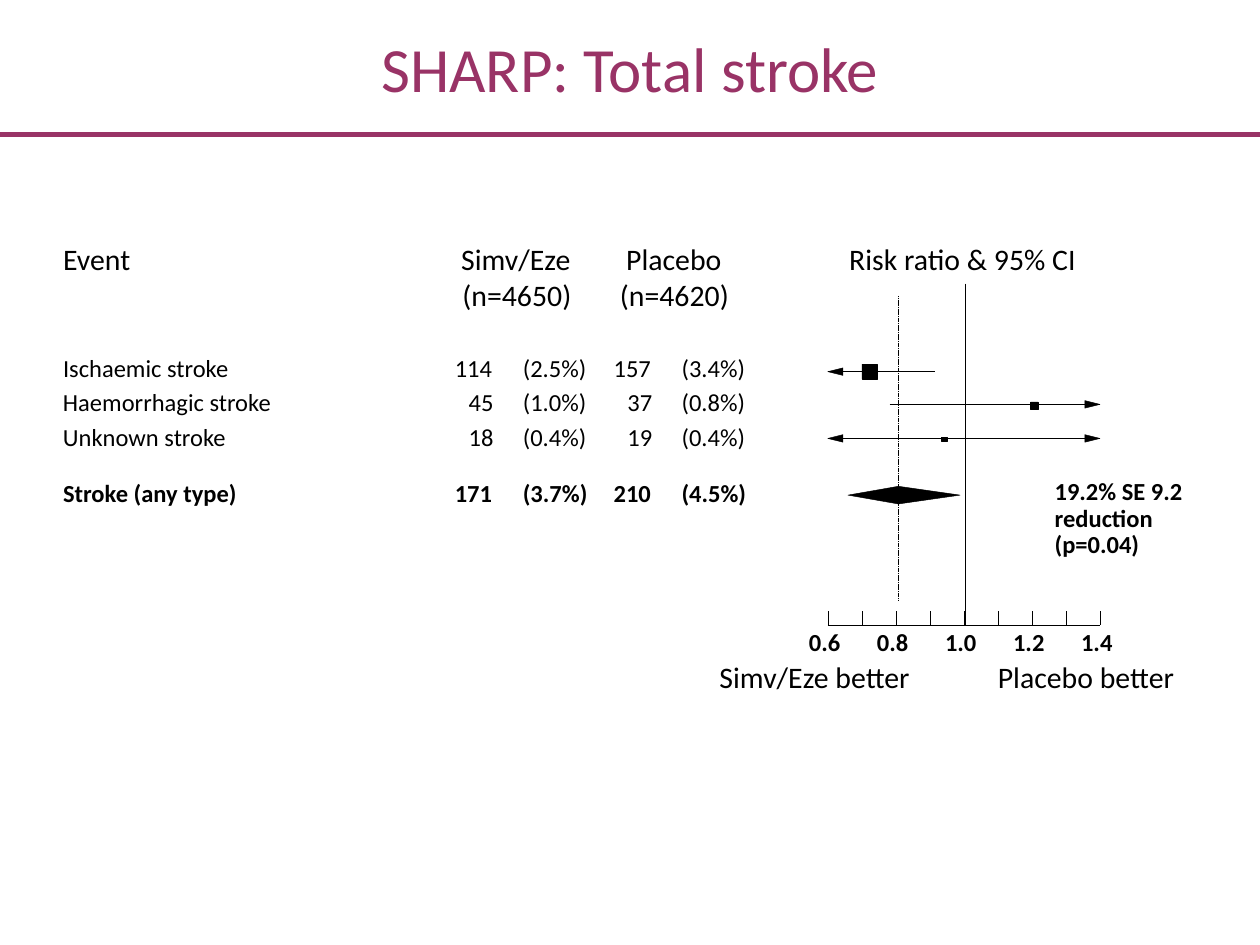
from pptx import Presentation
from pptx.dml.color import RGBColor
from pptx.enum.dml import MSO_LINE
from pptx.enum.shapes import MSO_CONNECTOR, MSO_SHAPE
from pptx.enum.text import MSO_ANCHOR, MSO_AUTO_SIZE, PP_ALIGN
from pptx.oxml.ns import qn
from pptx.util import Inches, Pt
from lxml import etree

DASH = MSO_LINE.SQUARE_DOT
STRAIGHT = MSO_CONNECTOR.STRAIGHT
RECT = MSO_SHAPE.RECTANGLE
MIDDLE = MSO_ANCHOR.MIDDLE
FIT = MSO_AUTO_SIZE.SHAPE_TO_FIT_TEXT
CENTER = PP_ALIGN.CENTER

COLORS = {"plum": "993366", "ink": "000000"}
LEFT, RIGHT, BASE = 6.57, 8.73, 4.96
UNIT = (RIGHT - LEFT) / 8


class Page:
    font = "Calibri"
    hair = 0.25

    def __init__(self, slide):
        self.slide = slide
        self.shapes = slide.shapes

    def color(self, name):
        return RGBColor.from_string(COLORS[name])

    def add_text(self, frame, text, size, bold, color):
        run = frame.paragraphs[0].add_run()
        run.text = text
        run.font.name = self.font
        run.font.size = Pt(size)
        run.font.bold = bold
        run.font.color.rgb = self.color(color)

    def title(self, text):
        box = self.shapes.add_textbox(0, 0, Inches(10), Inches(1.07))
        frame = box.text_frame
        frame.word_wrap = True
        frame.vertical_anchor = MIDDLE
        frame.paragraphs[0].alignment = CENTER
        self.add_text(frame, text, 36, False, "plum")

    def label(self, text, x, y, w, size=14, bold=False, h=0.31):
        box = self.shapes.add_textbox(Inches(x), Inches(y), Inches(w), Inches(h))
        frame = box.text_frame
        frame.margin_left = frame.margin_right = 0
        frame.margin_top = frame.margin_bottom = 0
        frame.word_wrap = False
        frame.auto_size = FIT
        self.add_text(frame, text, size, bold, "ink")

    def line(self, x1, y1, x2, y2, color="ink", width=hair, dash=None):
        line = self.shapes.add_connector(
            STRAIGHT, Inches(x1), Inches(y1), Inches(x2), Inches(y2))
        line.line.color.rgb = self.color(color)
        line.line.width = Pt(width)
        if dash:
            line.line.dash_style = dash
        etree.SubElement(line._element.spPr, qn("a:effectLst"))

    def paint(self, shape):
        shape.shadow.inherit = False
        shape.fill.solid()
        shape.fill.fore_color.rgb = self.color("ink")
        shape.line.color.rgb = self.color("ink")
        shape.line.width = Pt(self.hair)

    def block(self, x, y, w, h):
        self.paint(self.shapes.add_shape(
            RECT, Inches(x), Inches(y), Inches(w), Inches(h)))

    def shape(self, *points):
        spots = [(Inches(x), Inches(y)) for x, y in points]
        form = self.shapes.build_freeform(*spots[0])
        form.add_line_segments(spots[1:], close=True)
        self.paint(form.convert_to_shape())

    def arrow(self, tip, y, back):
        self.shape((tip, y), (tip + back, y - 0.03), (tip + back, y + 0.03))


def heads(page):
    for text, x, y, w in [
        ("Event", 0.5, 1.91, 0.65),
        ("Simv/Eze", 3.66, 1.91, 0.87),
        ("(n=4650)", 3.67, 2.2, 0.97),
        ("Placebo", 4.97, 1.91, 0.86),
        ("(n=4620)", 4.92, 2.2, 0.97),
        ("Risk ratio & 95% CI", 6.74, 1.91, 1.9),
        ("Simv/Eze better", 5.71, 5.23, 1.58),
        ("Placebo better", 7.92, 5.23, 1.57),
    ]:
        page.label(text, x, y, w, size=17, h=0.36)


def rows(page):
    for y, name, w, drug, rate, sham, part, bold in [
        (2.8, "Ischaemic stroke", 1.58, "114", "(2.5%)", "157", "(3.4%)", False),
        (3.07, "Haemorrhagic stroke", 1.94, "45", "(1.0%)", "37", "(0.8%)", False),
        (3.35, "Unknown stroke", 1.57, "18", "(0.4%)", "19", "(0.4%)", False),
        (3.79, "Stroke (any type)", 1.65, "171", "(3.7%)", "210", "(4.5%)", True),
    ]:
        page.label(name, 0.5, y, w, bold=bold)
        for edge, count, share in [(4.08, drug, rate), (5.34, sham, part)]:
            wide = 0.14 + 0.11 * len(count)
            page.label(count, edge - wide, y, wide, bold=bold)
            page.label(share, edge + 0.07, y, 0.7, bold=bold)


def plot(page):
    for y, start, end, box in [
        (2.95, LEFT, 7.42, (6.84, 2.89, 0.12, 0.12)),
        (3.21, 7.06, RIGHT, (8.18, 3.19, 0.06, 0.06)),
        (3.48, LEFT, RIGHT, (7.47, 3.47, 0.05, 0.03)),
    ]:
        page.block(*box)
        if start == LEFT:
            page.arrow(LEFT, y, 0.12)
        if end == RIGHT:
            page.arrow(RIGHT, y, -0.12)
        page.line(start, y, end, y)
    page.shape((7.13, 3.86), (7.62, 3.93), (7.13, 4), (6.73, 3.93))
    page.line(7.66, 2.25, 7.66, BASE)
    page.line(7.13, 2.35, 7.13, 4.77, dash=DASH)
    for row, (text, w) in enumerate(
            [("19.2% SE 9.2", 1.24), ("reduction", 0.99), ("(p=0.04)", 0.88)]):
        page.label(text, 8.37, 3.78 + 0.21 * row, w, bold=True)


def axis(page):
    page.line(LEFT, BASE, RIGHT, BASE)
    for step in range(9):
        x = LEFT + step * UNIT
        page.line(x, BASE, x, BASE - 0.11)
        if step % 2 == 0:
            page.label(f"{0.6 + step / 10:.1f}", x - 0.15, 4.98, 0.42, bold=True)


def main():
    deck = Presentation()
    deck.slide_width, deck.slide_height = Inches(10), Inches(7.5)
    page = Page(deck.slides.add_slide(deck.slide_layouts[6]))
    page.line(0, 1.07, 10, 1.07, "plum", 3)
    page.title("SHARP: Total stroke")
    heads(page)
    rows(page)
    plot(page)
    axis(page)
    deck.save("out.pptx")


if __name__ == "__main__":
    main()
